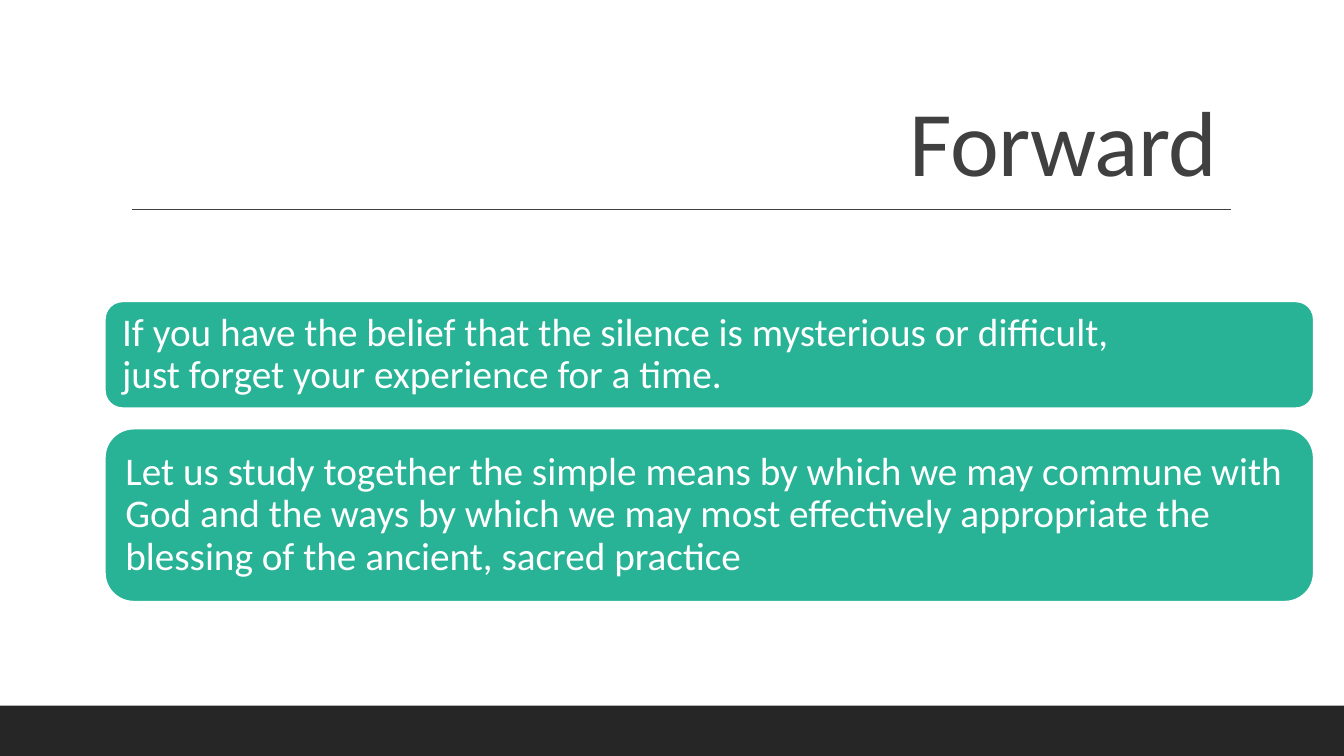
from dataclasses import dataclass

from lxml import etree
from pptx import Presentation
from pptx.dml.color import RGBColor
from pptx.enum.shapes import MSO_CONNECTOR, MSO_SHAPE
from pptx.enum.text import MSO_ANCHOR, PP_ALIGN
from pptx.oxml.ns import qn
from pptx.util import Inches, Pt

RECTANGLE = MSO_SHAPE.RECTANGLE
ROUNDED = MSO_SHAPE.ROUNDED_RECTANGLE
STRAIGHT = MSO_CONNECTOR.STRAIGHT
MIDDLE = MSO_ANCHOR.MIDDLE
BOTTOM = MSO_ANCHOR.BOTTOM
LEFT = PP_ALIGN.LEFT
RIGHT = PP_ALIGN.RIGHT

SLIDE_WIDTH = Inches(13.33)
SLIDE_HEIGHT = Inches(7.5)


@dataclass(frozen=True)
class Theme:
    font: str = "Calibri"
    white: str = "FFFFFF"
    ink: str = "404040"
    footer: str = "262626"
    card: str = "28B396"
    title_size: float = 66
    card_size: float = 28
    title_tracking: float = -0.5
    rule_width: float = 1
    outline_width: float = 1.25


THEME = Theme()

CARD_LEFT, CARD_WIDTH = 7.8, 89.95
CARDS_TOP, CARD_GAP = 39.87, 2.7
CARDS = (
    (14.13, "If you have the belief that the silence is mysterious or difficult, \n"
            "just forget your experience for a time."),
    (22.9, "Let us study together the simple means by which we may commune with "
           "God and the ways by which we may most effectively appropriate the "
           "blessing of the ancient, sacred practice"),
)


def across(percent):
    return round(SLIDE_WIDTH * percent / 100)


def down(percent):
    return round(SLIDE_HEIGHT * percent / 100)


def place(left, top, width, height):
    return across(left), down(top), across(width), down(height)


def write_text(shape, text, *, size, color, align=LEFT, anchor=MIDDLE,
               inset=0.12, tracking=0):
    frame = shape.text_frame
    frame.word_wrap = True
    frame.vertical_anchor = anchor
    frame.margin_left = frame.margin_right = Inches(inset)
    frame.margin_top = frame.margin_bottom = Inches(inset)
    paragraph = frame.paragraphs[0]
    paragraph.text = text.replace("\n", "\v")
    paragraph.alignment = align
    paragraph.line_spacing = 0.9
    for run in paragraph.runs:
        run.font.name = THEME.font
        run.font.size = Pt(size)
        run.font.color.rgb = RGBColor.from_string(color)
        if tracking:
            run.font._element.set("spc", str(round(tracking * 100)))


def add_block(slide, kind, box, fill, outline=None):
    shape = slide.shapes.add_shape(kind, *place(*box))
    shape.shadow.inherit = False
    shape.fill.solid()
    shape.fill.fore_color.rgb = RGBColor.from_string(fill)
    if outline:
        shape.line.color.rgb = RGBColor.from_string(outline)
        shape.line.width = Pt(THEME.outline_width)
    else:
        shape.line.fill.background()
    return shape


def add_rule(slide, left, right, top):
    rule = slide.shapes.add_connector(
        STRAIGHT, across(left), down(top), across(right), down(top))
    rule.line.color.rgb = RGBColor.from_string(THEME.ink)
    rule.line.width = Pt(THEME.rule_width)
    etree.SubElement(rule._element.spPr, qn("a:effectLst"))


def add_title(slide, text):
    title = slide.shapes.add_textbox(*place(8.78, 14.67, 82.52, 12.67))
    write_text(title, text, size=THEME.title_size, color=THEME.ink, align=RIGHT,
               anchor=BOTTOM, inset=0.1, tracking=THEME.title_tracking)


def add_cards(slide):
    top = CARDS_TOP
    for height, text in CARDS:
        card = add_block(slide, ROUNDED, (CARD_LEFT, top, CARD_WIDTH, height),
                         THEME.card, THEME.white)
        write_text(card, text, size=THEME.card_size, color=THEME.white)
        top += height + CARD_GAP


def main():
    presentation = Presentation()
    presentation.slide_width = SLIDE_WIDTH
    presentation.slide_height = SLIDE_HEIGHT
    slide = presentation.slides.add_slide(presentation.slide_layouts[6])
    add_block(slide, RECTANGLE, (0, 93.33, 100, 6.67), THEME.footer)
    add_rule(slide, 9.83, 91.6, 27.7)
    add_title(slide, "Forward")
    add_cards(slide)
    presentation.save("out.pptx")


if __name__ == "__main__":
    main()
